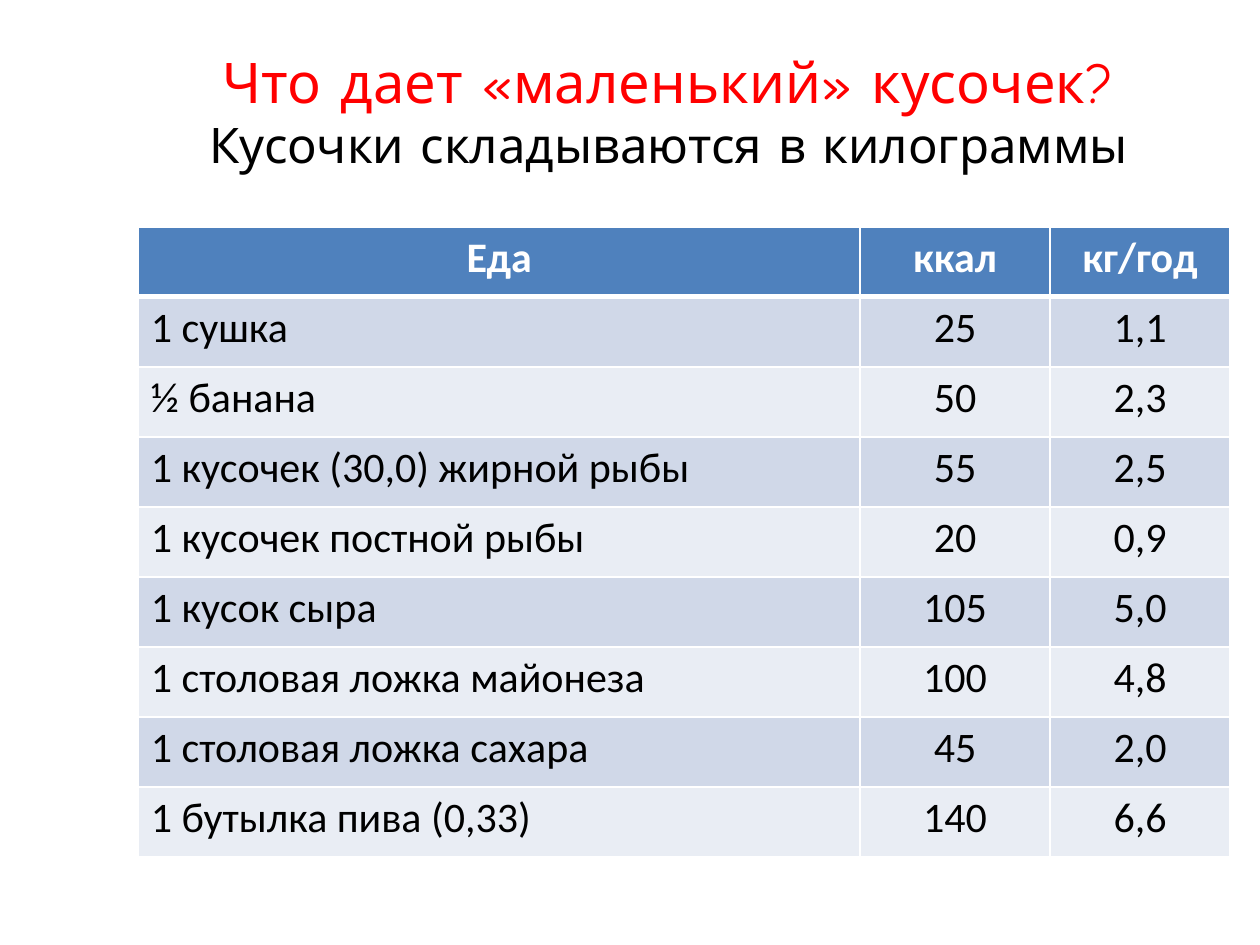
"""Build a slide with a table of snack calories and yearly weight gain."""
import dataclasses
import typing

import lxml.etree
import pptx
import pptx.dml.color
import pptx.enum.text
import pptx.oxml.ns
import pptx.util

Pt = pptx.util.Pt
Align = pptx.enum.text.PP_ALIGN


@dataclasses.dataclass(frozen=True)
class Theme:
    title_font: str = "Comic Neue"
    table_font: str = "Calibri"
    title_size: float = 32
    subtitle_size: float = 28
    table_size: float = 24
    accent: str = "FF0000"
    ink: str = "000000"
    paper: str = "FFFFFF"
    header: str = "4F81BD"
    bands: tuple[str, str] = ("D0D8E8", "E9EDF4")
    thin_line: float = 1
    thick_line: float = 3


class Food(typing.NamedTuple):
    name: str
    calories: str
    kilograms: str


THEME = Theme()
HEADINGS = Food("Еда", "ккал", "кг/год")
FOODS = [
    Food("1 сушка", "25", "1,1"),
    Food("½ банана", "50", "2,3"),
    Food("1 кусочек (30,0) жирной рыбы", "55", "2,5"),
    Food("1 кусочек постной рыбы", "20", "0,9"),
    Food("1 кусок сыра", "105", "5,0"),
    Food("1 столовая ложка майонеза", "100", "4,8"),
    Food("1 столовая ложка сахара", "45", "2,0"),
    Food("1 бутылка пива (0,33)", "140", "6,6"),
]
COLUMN_WIDTHS = (412.5, 108.5, 103)
ROW_HEIGHT = 40


def write(para, text: str, *, font: str, size: float, color: str,
          bold: bool = False, align=Align.CENTER) -> None:
    para.alignment = align
    span = para.add_run()
    span.text = text
    span.font.name = font
    span.font.size = Pt(size)
    span.font.bold = bold
    span.font.color.rgb = pptx.dml.color.RGBColor.from_string(color)


def add_border(cell, side: str, width: float) -> None:
    qn = pptx.oxml.ns.qn
    properties = cell._tc.get_or_add_tcPr()
    line = lxml.etree.SubElement(properties, qn(f"a:ln{side}"), w=str(Pt(width)))
    fill = lxml.etree.SubElement(line, qn("a:solidFill"))
    lxml.etree.SubElement(fill, qn("a:srgbClr"), val=THEME.paper)


def add_title(page) -> None:
    box = page.shapes.add_textbox(Pt(62), Pt(18), Pt(640), Pt(90))
    frame = box.text_frame
    frame.word_wrap = True
    frame.vertical_anchor = pptx.enum.text.MSO_ANCHOR.MIDDLE
    para = frame.paragraphs[0]
    write(para, "Что дает «маленький» кусочек?", font=THEME.title_font,
          size=THEME.title_size, color=THEME.accent)
    para.add_line_break()
    write(para, "Кусочки складываются в килограммы", font=THEME.title_font,
          size=THEME.subtitle_size, color=THEME.ink)


def fill_cell(cell, text: str, row: int, column: int) -> None:
    is_header = row == 0
    widths = {
        "L": THEME.thin_line,
        "R": THEME.thin_line,
        "T": THEME.thick_line if row == 1 else THEME.thin_line,
        "B": THEME.thick_line if is_header else THEME.thin_line,
    }
    for side, width in widths.items():
        add_border(cell, side, width)
    color = THEME.header if is_header else THEME.bands[(row - 1) % 2]
    cell.fill.solid()
    cell.fill.fore_color.rgb = pptx.dml.color.RGBColor.from_string(color)
    write(cell.text_frame.paragraphs[0], text, font=THEME.table_font,
          size=THEME.table_size, color=THEME.paper if is_header else THEME.ink,
          bold=is_header,
          align=Align.LEFT if column == 0 and not is_header else Align.CENTER)


def add_food_table(page) -> None:
    rows = [HEADINGS, *FOODS]
    table = page.shapes.add_table(
        len(rows), len(COLUMN_WIDTHS), Pt(79), Pt(129.6),
        Pt(sum(COLUMN_WIDTHS)), Pt(ROW_HEIGHT * len(rows))).table
    for column, width in zip(table.columns, COLUMN_WIDTHS):
        column.width = Pt(width)
    for row, food in enumerate(rows):
        for column, text in enumerate(food):
            fill_cell(table.cell(row, column), text, row, column)


def main() -> None:
    deck = pptx.Presentation()
    deck.slide_width, deck.slide_height = Pt(720), Pt(540)
    page = deck.slides.add_slide(deck.slide_layouts[6])
    add_title(page)
    add_food_table(page)
    deck.save("out.pptx")


if __name__ == "__main__":
    main()
